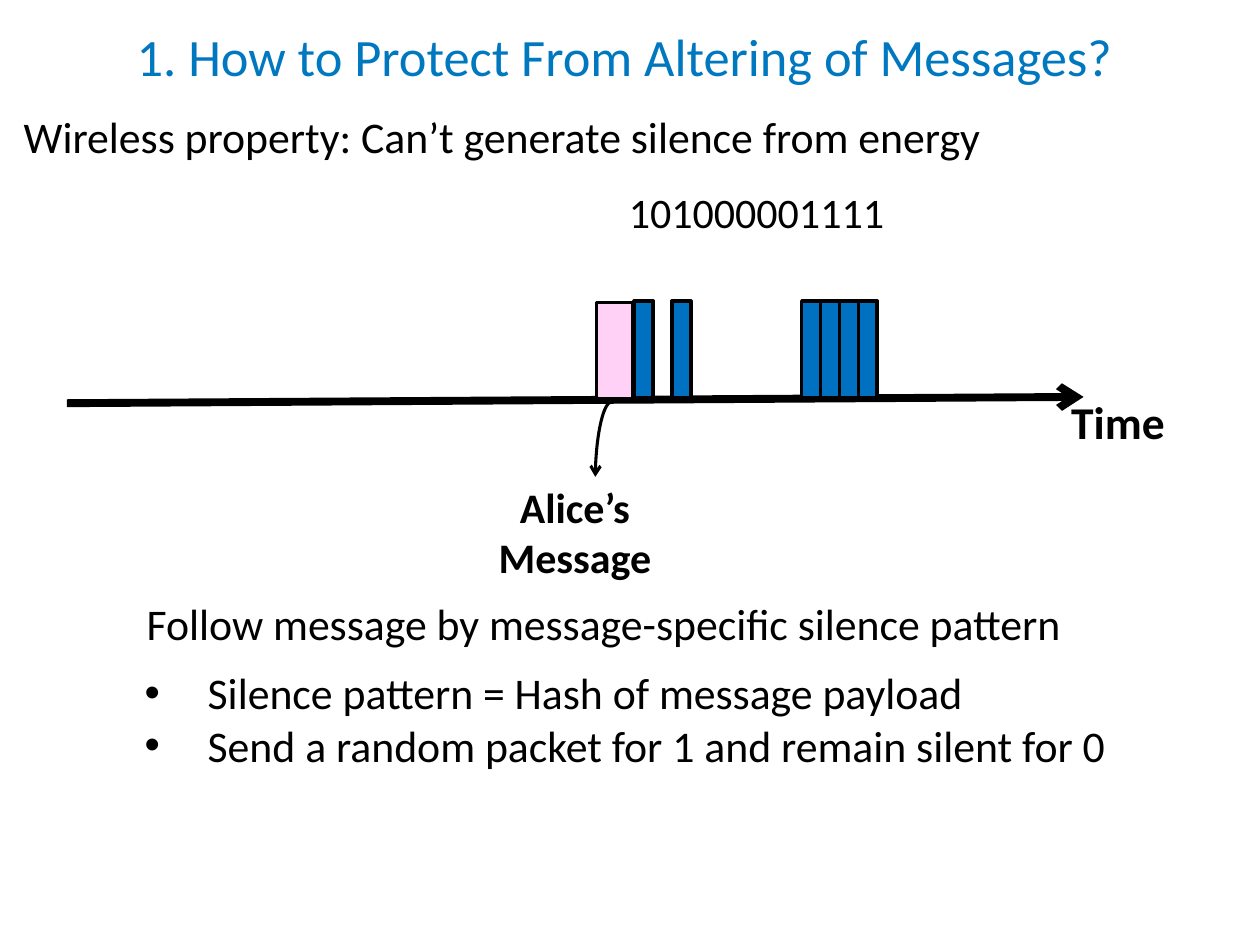
from pptx import Presentation
from pptx.dml.color import RGBColor
from pptx.enum import shapes, text
from pptx.oxml.ns import qn
from pptx.util import Pt
from lxml import etree

BLACK = RGBColor(0x00, 0x00, 0x00)
TITLE_BLUE = RGBColor(0x00, 0x78, 0xC0)
PACKET_BLUE = RGBColor(0x00, 0x70, 0xC0)
MESSAGE_PINK = RGBColor(0xFF, 0xD1, 0xF6)
FONT = "Calibri"
LEFT, CENTER = text.PP_ALIGN.LEFT, text.PP_ALIGN.CENTER


def add_text(slide, box, lines, size, color=BLACK, bold=False, align=LEFT,
             anchor=text.MSO_ANCHOR.TOP, inset=3.6):
    """Place one paragraph per line in the box (left, top, width, height)."""
    frame = slide.shapes.add_textbox(*map(Pt, box)).text_frame
    frame.word_wrap = True
    frame.vertical_anchor = anchor
    frame.margin_top = frame.margin_bottom = Pt(inset)
    frame.text = "\n".join(lines)
    for paragraph in frame.paragraphs:
        paragraph.alignment = align
        font = paragraph.font
        font.name, font.size, font.bold = FONT, Pt(size), bold
        font.color.rgb = color
    return frame


def add_bullets(frame, indent):
    for paragraph in frame.paragraphs:
        properties = paragraph._p.get_or_add_pPr()
        properties.set("marL", str(Pt(indent)))
        properties.set("indent", str(-Pt(indent)))
        # Bullet elements precede the default run properties
        bullet_font = etree.Element(qn("a:buFont"), typeface="Arial")
        bullet = etree.Element(qn("a:buChar"), char="•")
        properties.insert(0, bullet_font)
        properties.insert(1, bullet)


def add_packet(slide, left, top, width, height, fill):
    packet = slide.shapes.add_shape(
        shapes.MSO_SHAPE.RECTANGLE, Pt(left), Pt(top), Pt(width), Pt(height))
    packet.shadow.inherit = False
    packet.fill.solid()
    packet.fill.fore_color.rgb = fill
    packet.line.color.rgb = BLACK
    packet.line.width = Pt(2)


def add_arrow(slide, kind, start, end, weight):
    arrow = slide.shapes.add_connector(kind, *map(Pt, (*start, *end)))
    arrow.line.color.rgb = BLACK
    arrow.line.width = Pt(weight)
    etree.SubElement(arrow.line._get_or_add_ln(), qn("a:tailEnd"), type="arrow")
    etree.SubElement(arrow._element.spPr, qn("a:effectLst"))
    return arrow


def add_heading(slide, left, top, width):
    add_text(slide, (left, top, width, 64), ["1. How to Protect From Altering of Messages?"],
             30, TITLE_BLUE, align=CENTER, anchor=text.MSO_ANCHOR.MIDDLE)
    add_text(slide, (left + 6.5, top + 62.5, width, 32),
             ["Wireless property: Can’t generate silence from energy"], 25, inset=0)


def add_timeline(slide, left, top):
    """Time axis with Alice's message and the packets that follow it."""
    # Time axis
    add_text(slide, (left + 566.8, top + 118.8, 82, 51), ["Time"], 26, bold=True)
    add_arrow(slide, shapes.MSO_CONNECTOR.STRAIGHT,
              (left, top + 127.4), (left + 581, top + 123.8), 4.5)

    # Alice's message, with a quarter-turned curve down to its label
    add_text(slide, (left + 231.3, top + 168.4, 118, 66), ["Alice’s Message"], 24,
             bold=True, align=CENTER)
    curve = add_arrow(slide, shapes.MSO_CONNECTOR.CURVE,
                      (left + 268.5, top + 117.3), (left + 354.2, top + 136), 1.75)
    curve._element.spPr.find(qn("a:xfrm")).set("rot", "5400000")
    add_packet(slide, left + 302.6, top + 69.8, 20.9, 55.4, MESSAGE_PINK)

    # Silence pattern: a packet for each 1, nothing for each 0
    bit_width = 10.8
    for burst_left, bits in ((324.2, "101"), (419.9, "1111")):
        for slot, bit in enumerate(bits):
            if bit == "1":
                add_packet(slide, left + burst_left + slot * bit_width, top + 69.1,
                           bit_width, 55.4, PACKET_BLUE)
    add_text(slide, (left + 314.1, top, 165, 36), ["101000001111"], 24)


def add_explanation(slide, left, top, width):
    add_text(slide, (left - 90.7, top, width + 147.6, 32),
             ["Follow message by message-specific silence pattern"], 25,
             align=CENTER, inset=0)
    rules = add_text(slide, (left, top + 39.5, width, 62),
                     ["Silence pattern = Hash of message payload",
                      "Send a random packet for 1 and remain silent for 0"], 25, inset=0)
    add_bullets(rules, 36)


def main():
    deck = Presentation()
    deck.slide_width, deck.slide_height = Pt(720), Pt(540)
    slide = deck.slides.add_slide(deck.slide_layouts[6])
    add_heading(slide, 0, 0, 714)
    add_timeline(slide, 38.2, 103)
    add_explanation(slide, 75.6, 341, 572.4)
    deck.save("out.pptx")


if __name__ == "__main__":
    main()
